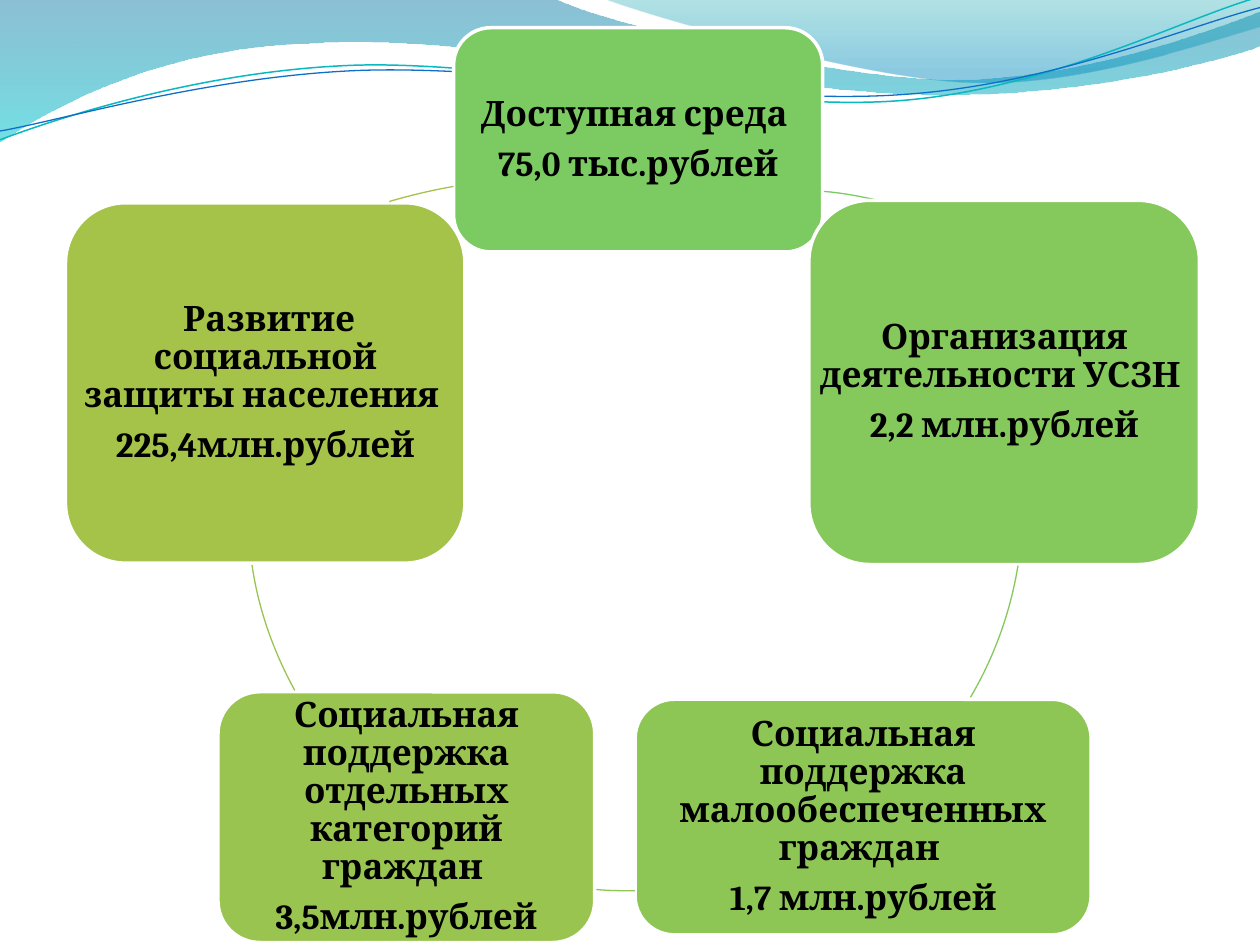
from dataclasses import dataclass
from math import cos, radians, sin
from typing import Optional

from lxml.etree import SubElement
from pptx import Presentation
from pptx.dml.color import RGBColor
from pptx.enum.shapes import MSO_SHAPE as Shape
from pptx.enum.text import MSO_ANCHOR as Anchor, PP_ALIGN as Align
from pptx.oxml.ns import qn
from pptx.util import Inches, Pt

WHITE = RGBColor(0xFF, 0xFF, 0xFF)
BLACK = RGBColor(0x00, 0x00, 0x00)
OCEAN = RGBColor(0x00, 0x74, 0xA1)
AQUA = RGBColor(0x00, 0xC6, 0xCF)
LAGOON = RGBColor(0x00, 0xA1, 0xA9)
SKY = RGBColor(0x00, 0x8B, 0xBF)
TEAL = RGBColor(0x0A, 0xB8, 0xBF)
BLUE = RGBColor(0x0F, 0x6F, 0xC6)
GREENS = [
    RGBColor(0x7C, 0xCA, 0x62),
    RGBColor(0x85, 0xC8, 0x5C),
    RGBColor(0x8E, 0xC6, 0x56),
    RGBColor(0x99, 0xC4, 0x4F),
    RGBColor(0xA5, 0xC2, 0x49),
]
FONT = "Cambria"
TILT = 357.3
RING = 6.16


@dataclass
class GradientStop:
    position: float
    color: RGBColor
    opacity: int


@dataclass
class Curve:
    place: tuple
    start: tuple
    segments: list
    stops: Optional[list] = None
    color: Optional[RGBColor] = None
    width: float = 0.75
    rotation: float = 0


@dataclass
class Programme:
    place: tuple
    name: str
    amount: str
    ring_corner: tuple
    arc_start: tuple
    arc: tuple


WAVES = [
    Curve((-0.01, -0.01, 10.02, 1.14), (0, 0), [
        (4.4, -0.01), (4.76, 0.17, 6.64, 0.63, 7.58, 0.63),
        (8.53, 0.63, 9.58, 0.26, 10, 0.09), (10.01, 0.36),
        (9.83, 0.44, 8.7, 0.76, 7.46, 0.75), (6.22, 0.75, 3.82, 0.28, 2.57, 0.34),
        (1.29, 0.36, 0.46, 0.83, -0.01, 1.13), (0, 0),
    ], stops=[GradientStop(0, OCEAN, 45), GradientStop(1, AQUA, 55)]),
    Curve((4.79, -0.01, 5.21, 0.7), (4.79, -0.01), [
        (5.09, 0.11, 6.82, 0.62, 7.69, 0.65), (8.56, 0.69, 9.61, 0.32, 10, 0.21),
        (10, 0), (4.79, -0.01),
    ], stops=[GradientStop(0, LAGOON, 30), GradientStop(0.8, SKY, 45)]),
    Curve((-0.02, 0.22, 10.02, 0.71), (0, 1.11), [
        (0.48, 0.93, 1.58, 0.57, 2.77, 0.52), (3.95, 0.47, 5.93, 0.89, 7.13, 0.8),
        (8.33, 0.71, 9.38, 0.15, 9.98, -0.02),
    ], color=TEAL, width=0.85, rotation=TILT),
    Curve((-0.02, 0.3, 10.03, 0.58), (0, 1.04), [
        (0.47, 0.96, 1.64, 0.61, 2.83, 0.56), (4.03, 0.51, 5.97, 0.84, 7.17, 0.75),
        (8.36, 0.67, 9.41, 0.21, 10, 0.06),
    ], color=BLUE, rotation=TILT),
]

PROGRAMMES = [
    Programme((3.6, 0.22, 2.93, 1.78), "Доступная среда ", "75,0 тыс.рублей",
              (3.18, 1.51), (6.54, 1.52), (6.68, 1.53, 6.83, 1.56, 6.97, 1.59)),
    Programme((6.42, 1.59, 3.1, 2.89), "Организация деятельности УСЗН ", "2,2 млн.рублей",
              (1.96, 0.91), (8.08, 4.49), (8.02, 4.86, 7.89, 5.22, 7.7, 5.54)),
    Programme((5.04, 5.55, 3.62, 1.87), "Социальная поддержка малообеспеченных граждан ",
              "1,7 млн.рублей",
              (1.96, 0.91), (5.04, 7.07), (4.93, 7.07, 4.83, 7.07, 4.73, 7.06)),
    Programme((1.73, 5.49, 2.99, 1.99), "Социальная поддержка отдельных категорий граждан ",
              "3,5млн.рублей",
              (1.96, 0.91), (2.34, 5.48), (2.17, 5.17, 2.05, 4.83, 2, 4.48)),
    Programme((0.52, 1.61, 3.17, 2.86), " Развитие социальной защиты населения ",
              "225,4млн.рублей",
              (0.96, 1.45), (3.09, 1.6), (3.26, 1.55, 3.43, 1.51, 3.6, 1.48)),
]


def apply(target, values: dict) -> None:
    for name, value in values.items():
        setattr(target, name, value)


def local_point(curve: Curve, x: float, y: float) -> dict:
    left, top, width, height = curve.place
    angle = radians(-curve.rotation)
    dx, dy = x - left - width / 2, y - top - height / 2
    across = width / 2 + dx * cos(angle) - dy * sin(angle)
    down = height / 2 + dx * sin(angle) + dy * cos(angle)
    return {"x": str(int(Inches(across))), "y": str(int(Inches(down)))}


def trace(outline, curve: Curve) -> None:
    for child in list(outline):
        outline.remove(child)
    for index, segment in enumerate([curve.start, *curve.segments]):
        tag = "a:cubicBezTo" if len(segment) == 6 else "a:lnTo" if index else "a:moveTo"
        step = SubElement(outline, qn(tag))
        for x, y in zip(segment[::2], segment[1::2]):
            SubElement(step, qn("a:pt"), local_point(curve, x, y))
    if curve.stops:
        SubElement(outline, qn("a:close"))


def fill_gradient(shape, stops: list) -> None:
    shape.fill.gradient()
    shape.fill.gradient_angle = 270
    for target, stop in zip(shape.fill.gradient_stops, stops):
        target.color.rgb = stop.color
        target.position = stop.position
    for color, stop in zip(shape._element.iter(qn("a:srgbClr")), stops):
        SubElement(color, qn("a:alpha"), val=str(stop.opacity * 1000))


def draw_curve(page, curve: Curve) -> None:
    left, top, width, height = [Inches(value) for value in curve.place]
    builder = page.shapes.build_freeform(left, top, scale=1.0)
    builder.add_line_segments([(left + width, top + height)], close=False)
    shape = builder.convert_to_shape()
    trace(next(shape._element.iter(qn("a:path"))), curve)
    shape.rotation = curve.rotation
    shape.shadow.inherit = False
    if curve.stops:
        fill_gradient(shape, curve.stops)
        shape.line.fill.background()
    else:
        shape.fill.background()
        shape.line.color.rgb = curve.color
        shape.line.width = Pt(curve.width)


def draw_programme(page, programme: Programme, color: RGBColor) -> None:
    place = [Inches(value) for value in programme.place]
    card = page.shapes.add_shape(Shape.ROUNDED_RECTANGLE, *place)
    card.shadow.inherit = False
    card.fill.solid()
    card.fill.fore_color.rgb = color
    card.line.color.rgb = WHITE
    card.line.width = Pt(2)

    frame = page.shapes.add_textbox(*place).text_frame
    margins = {f"margin_{side}": Inches(0.08) for side in ("left", "top", "right", "bottom")}
    apply(frame, {"word_wrap": True, "vertical_anchor": Anchor.MIDDLE, **margins})
    for index, text in enumerate((programme.name, programme.amount)):
        para = frame.add_paragraph() if index else frame.paragraphs[0]
        apply(para, {"alignment": Align.CENTER, "line_spacing": 0.9, "space_after": Pt(7)})
        span = para.add_run()
        span.text = text
        apply(span.font, {"name": FONT, "size": Pt(20), "bold": True})
        span.font.color.rgb = BLACK

    ring = (*programme.ring_corner, RING, RING)
    draw_curve(page, Curve(ring, programme.arc_start, [programme.arc], color=color))


def main() -> None:
    deck = Presentation()
    apply(deck, {"slide_width": Inches(10), "slide_height": Inches(7.5)})
    page = deck.slides.add_slide(deck.slide_layouts[6])
    page.background.fill.solid()
    page.background.fill.fore_color.rgb = WHITE
    for wave in WAVES:
        draw_curve(page, wave)
    for programme, color in zip(PROGRAMMES, GREENS):
        draw_programme(page, programme, color)
    deck.save("out.pptx")


if __name__ == "__main__":
    main()
